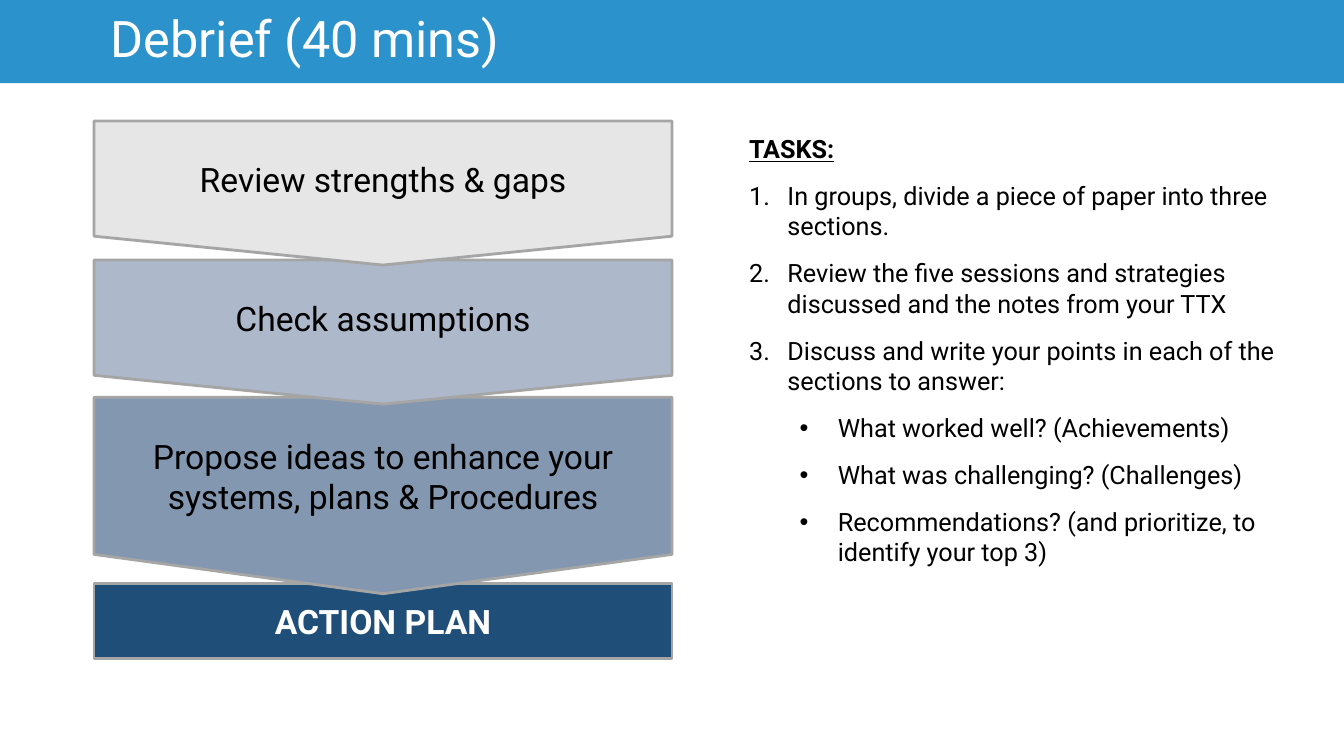
from lxml.etree import SubElement
from pptx import Presentation
from pptx.dml.color import RGBColor
from pptx.enum.shapes import MSO_SHAPE as Shape
from pptx.enum.text import MSO_ANCHOR as Anchor, PP_ALIGN as Align
from pptx.oxml.ns import qn
from pptx.util import Inches, Pt

FONT = "Roboto"
BLACK = RGBColor(0x00, 0x00, 0x00)
WHITE = RGBColor(0xFF, 0xFF, 0xFF)
BANNER_BLUE = RGBColor(0x2B, 0x92, 0xCB)
OUTLINE_GREY = RGBColor(0xA5, 0xA5, 0xA5)
PALE_GREY = RGBColor(0xE7, 0xE6, 0xE6)
LIGHT_SLATE = RGBColor(0xAD, 0xB9, 0xCA)
SLATE = RGBColor(0x84, 0x97, 0xB0)
NAVY = RGBColor(0x1F, 0x4E, 0x79)

SLIDE_WIDTH, SLIDE_HEIGHT = 13.33, 7.5
COLUMN_WIDTH = 0.43 * SLIDE_WIDTH

# Text, fill, bold, top and height within the flow
STEPS = [
    ("Review strengths & gaps", PALE_GREY, 0, 1.43),
    ("Check assumptions", LIGHT_SLATE, 1.38, 1.43),
    ("Propose ideas to enhance your systems, plans & Procedures", SLATE, 2.74, 1.95),
]
GOAL = ("ACTION PLAN", NAVY, 4.59, 0.74)

TASKS = [
    "In groups, divide a piece of paper into three sections.",
    "Review the five sessions and strategies discussed and the notes from your TTX",
    "Discuss and write your points in each of the sections to answer:",
]
QUESTIONS = [
    "What worked well? (Achievements)",
    "What was challenging? (Challenges)",
    "Recommendations? (and prioritize, to identify your top 3)",
]


def write(paragraph, text, size=18, color=BLACK, bold=False, underline=False,
          align=Align.LEFT, after=0, line_spacing=None):
    """Put formatted text into a paragraph."""
    paragraph.alignment = align
    paragraph.space_after = Pt(after)
    if line_spacing:
        paragraph.line_spacing = line_spacing
    run = paragraph.add_run()
    run.text = text
    font = run.font
    font.name, font.size, font.bold, font.underline = FONT, Pt(size), bold, underline
    font.color.rgb = color


def set_bullet(paragraph, indent, tag, **attributes):
    """Give a paragraph a hanging indent and a number or bullet."""
    properties = paragraph._p.get_or_add_pPr()
    properties.set("marL", str(Inches(indent)))
    properties.set("indent", str(-Inches(0.38)))
    if tag == "a:buChar":
        SubElement(properties, qn("a:buFont"), typeface="Arial")
    SubElement(properties, qn(tag), **attributes)


def add_block(shapes, kind, box, fill, outline=None):
    """Add a filled shape without a shadow."""
    shape = shapes.add_shape(kind, *map(Inches, box))
    shape.shadow.inherit = False
    shape.fill.solid()
    shape.fill.fore_color.rgb = fill
    if outline:
        shape.line.color.rgb = outline
        shape.line.width = Pt(2)
    else:
        shape.line.fill.background()
    shape.text_frame.word_wrap = True
    shape.text_frame.vertical_anchor = Anchor.MIDDLE
    return shape


def add_banner(slide, left, top, width, height):
    banner = add_block(slide.shapes, Shape.RECTANGLE, (left, top, width, height), BANNER_BLUE)
    banner.text_frame.margin_left = Inches(1.1)
    write(banner.text_frame.paragraphs[0], "Debrief (40 mins)", size=36,
          color=WHITE, line_spacing=0.9)


def add_flow(slide, left, top, width):
    shapes = slide.shapes.add_group_shape().shapes
    # Drawn from the bottom up, so each point overlaps the block below it
    for step in [GOAL, *reversed(STEPS)]:
        text, fill, offset, height = step
        is_goal = step is GOAL
        kind = Shape.RECTANGLE if is_goal else Shape.FLOWCHART_OFFPAGE_CONNECTOR
        block = add_block(shapes, kind, (left, top + offset, width, height), fill, OUTLINE_GREY)
        write(block.text_frame.paragraphs[0], text, size=24, bold=is_goal,
              color=WHITE if is_goal else BLACK, align=Align.CENTER)


def add_tasks(slide, left, top, width, height):
    frame = slide.shapes.add_textbox(*map(Inches, (left, top, width, height))).text_frame
    frame.word_wrap = True
    write(frame.paragraphs[0], "TASKS:", bold=True, underline=True, after=12)
    for task in TASKS:
        paragraph = frame.add_paragraph()
        write(paragraph, task, after=12)
        set_bullet(paragraph, 0.38, "a:buAutoNum", type="arabicPeriod")
    for question in QUESTIONS:
        paragraph = frame.add_paragraph()
        paragraph.level = 1
        write(paragraph, question, after=12)
        set_bullet(paragraph, 0.88, "a:buChar", char="•")


def main():
    presentation = Presentation()
    presentation.slide_width = Inches(SLIDE_WIDTH)
    presentation.slide_height = Inches(SLIDE_HEIGHT)
    slide = presentation.slides.add_slide(presentation.slide_layouts[6])
    add_flow(slide, 0.07 * SLIDE_WIDTH, 0.16 * SLIDE_HEIGHT, COLUMN_WIDTH)
    add_banner(slide, 0, 0, SLIDE_WIDTH, 0.11 * SLIDE_HEIGHT)
    add_tasks(slide, 0.55 * SLIDE_WIDTH, 0.17 * SLIDE_HEIGHT, COLUMN_WIDTH, 0.71 * SLIDE_HEIGHT)
    presentation.save("out.pptx")


if __name__ == "__main__":
    main()
